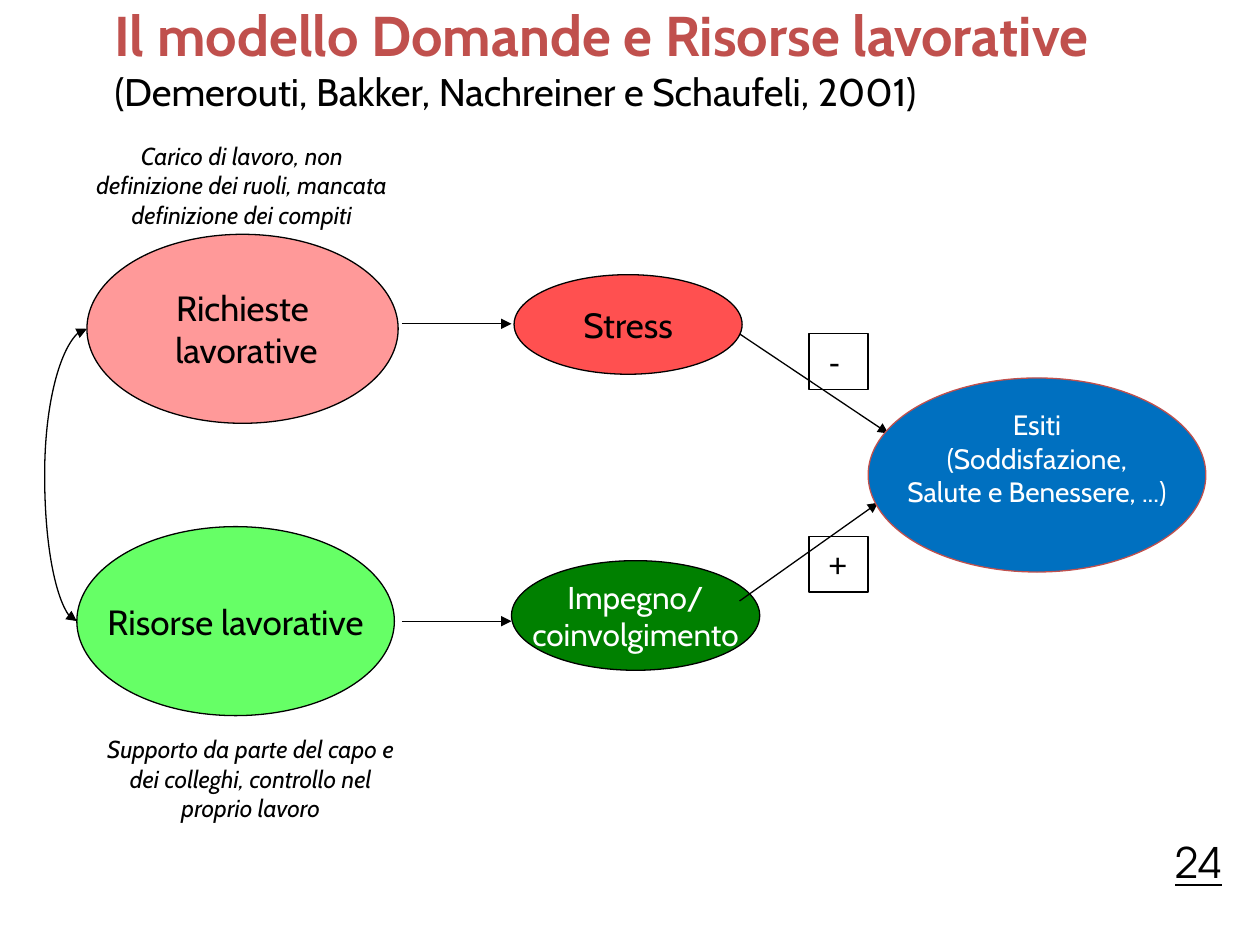
from dataclasses import dataclass

from lxml.etree import SubElement
from pptx import Presentation
from pptx.dml.color import RGBColor
from pptx.enum.shapes import MSO_CONNECTOR, MSO_SHAPE
from pptx.enum.text import MSO_ANCHOR, MSO_AUTO_SIZE, PP_ALIGN
from pptx.oxml.ns import qn
from pptx.util import Inches, Pt


@dataclass(frozen=True)
class Theme:
    font: str = "Cabin"
    sign: str = "Calibri"
    number: str = "TeX Gyre Adventor"
    black: str = "000000"
    white: str = "FFFFFF"
    accent: str = "C0504D"
    demand: str = "FF9999"
    resource: str = "66FF66"
    stress: str = "FF5050"
    engage: str = "008000"
    outcome: str = "0070C0"
    title: int = 32
    page: int = 24
    source: int = 22
    large: int = 20
    medium: int = 18
    small: int = 16
    note: int = 14
    line: float = 0.75


THEME = Theme()
COLS, ROWS = 100, 75
CELL = Inches(0.1)
TOP, LOW = 25.7, 49.3  # rows of the upper and lower arrows


def grid(*cells):
    """Turn columns and rows into lengths."""
    return [round(cell * CELL) for cell in cells]


def color(code):
    return RGBColor.from_string(code)


def write(frame, lines, size, ink=THEME.black, font=THEME.font,
          align=PP_ALIGN.CENTER, **style):
    """Fill a frame, one paragraph per line; style names font switches."""
    for index, line in enumerate(lines):
        para = frame.add_paragraph() if index else frame.paragraphs[0]
        para.alignment = align
        add_run(para, line, size, ink, font, **style)


def add_run(para, text, size, ink, font=THEME.font, **style):
    run = para.add_run()
    run.text = text
    run.font.name, run.font.size = font, Pt(size)
    run.font.color.rgb = color(ink)
    for name, value in style.items():
        setattr(run.font, name, value)


def add_box(slide, kind, place, fill=None, edge=THEME.black):
    """Draw an outlined shape and return its text frame."""
    shape = slide.shapes.add_shape(kind, *grid(*place))
    shape.shadow.inherit = False
    if fill:
        shape.fill.solid()
        shape.fill.fore_color.rgb = color(fill)
    else:
        shape.fill.background()
    shape.line.color.rgb = color(edge)
    shape.line.width = Pt(THEME.line)
    return shape.text_frame


def add_oval(slide, place, lines, fill, size, ink=THEME.black,
             edge=THEME.black, lift=0):
    """Draw a labelled oval; lift is extra bottom margin in rows."""
    frame = add_box(slide, MSO_SHAPE.OVAL, place, fill, edge)
    frame.word_wrap = False
    frame.vertical_anchor = MSO_ANCHOR.MIDDLE
    frame.margin_bottom += round(lift * CELL)
    write(frame, lines, size, ink)


def add_sign(slide, row, text):
    frame = add_box(slide, MSO_SHAPE.RECTANGLE, (64.2, row, 4.7, 4.4))
    frame.vertical_anchor = MSO_ANCHOR.TOP
    write(frame, [text], THEME.large, font=THEME.sign, align=PP_ALIGN.LEFT)


def add_text(slide, place, text, size, **style):
    frame = slide.shapes.add_textbox(*grid(*place)).text_frame
    frame.word_wrap = True
    write(frame, [text], size, **style)


def add_arrow(slide, ends, kind=MSO_CONNECTOR.STRAIGHT, both=False):
    link = slide.shapes.add_connector(kind, *grid(*ends))
    link.line.color.rgb = color(THEME.black)
    link.line.width = Pt(THEME.line)
    stroke = link.line._ln
    for tag in ("a:headEnd", "a:tailEnd") if both else ("a:tailEnd",):
        SubElement(stroke, qn(tag), type="triangle")
    SubElement(link._element.spPr, qn("a:effectLst"))
    return link


def add_loop(slide, ends, bulge):
    """Draw a curved double arrow; bulge is a share of its width."""
    link = add_arrow(slide, ends, MSO_CONNECTOR.CURVE, both=True)
    shape = link._element.spPr.find(qn("a:prstGeom"))
    guides = shape.find(qn("a:avLst"))
    if guides is None:
        guides = SubElement(shape, qn("a:avLst"))
    SubElement(guides, qn("a:gd"), name="adj1",
               fmla=f"val {round(bulge * 100000)}")


def set_title(slide, place, head, source):
    title = slide.shapes.title
    title.left, title.top, title.width, title.height = grid(*place)
    frame = title.text_frame
    frame.auto_size = MSO_AUTO_SIZE.NONE
    frame.vertical_anchor = MSO_ANCHOR.MIDDLE
    write(frame, [head], THEME.title, THEME.accent,
          align=PP_ALIGN.LEFT, bold=True)
    para = frame.add_paragraph()
    para.alignment = PP_ALIGN.LEFT
    add_run(para, source, THEME.source, THEME.black, bold=False)


def main():
    deck = Presentation()
    deck.slide_width, deck.slide_height = grid(COLS, ROWS)
    slide = deck.slides.add_slide(deck.slide_layouts[5])
    set_title(slide, (8.1, -1.7, 83.5, 12.5),
              "Il modello Domande e Risorse lavorative",
              "(Demerouti, Bakker, Nachreiner e Schaufeli, 2001)")

    add_oval(slide, (6.9, 18.6, 24.7, 15), ["Richieste", " lavorative"],
             THEME.demand, THEME.large)
    add_oval(slide, (6.1, 41.8, 25.2, 15), ["Risorse lavorative"],
             THEME.resource, THEME.large)
    add_oval(slide, (40.8, 21.8, 18.1, 7.9), ["Stress"],
             THEME.stress, THEME.large)
    add_oval(slide, (40.6, 44.5, 19.7, 8.7), ["Impegno/", "coinvolgimento"],
             THEME.engage, THEME.medium, THEME.white)

    add_loop(slide, (6.1, LOW, 6.9, 26.1), -3.2)
    for row in (TOP, LOW):
        add_arrow(slide, (31.9, row, 40.6, row))
    add_arrow(slide, (58.7, 26.5, 70.5, 34.4))
    add_arrow(slide, (58.7, 47.7, 69.7, 39.9))
    add_sign(slide, 26.5, " -")
    add_sign(slide, 42.6, " +")
    add_oval(slide, (68.9, 30, 26.8, 15.4),
             ["Esiti", "(Soddisfazione,", "Salute e Benessere, ...)"],
             THEME.outcome, THEME.small, THEME.white, THEME.accent, lift=2.7)

    add_text(slide, (92.3, 65.9, 7.9, 2.6), "24", THEME.page,
             font=THEME.number, align=PP_ALIGN.LEFT, underline=True)
    add_text(slide, (6.2, 10.7, 26, 8.1),
             "Carico di lavoro, non definizione dei ruoli, "
             "mancata definizione dei compiti", THEME.note, italic=True)
    add_text(slide, (6.9, 57.8, 26, 8.1),
             "Supporto da parte del capo e dei colleghi, "
             "controllo nel proprio lavoro", THEME.note, italic=True)
    deck.save("out.pptx")


if __name__ == "__main__":
    main()
